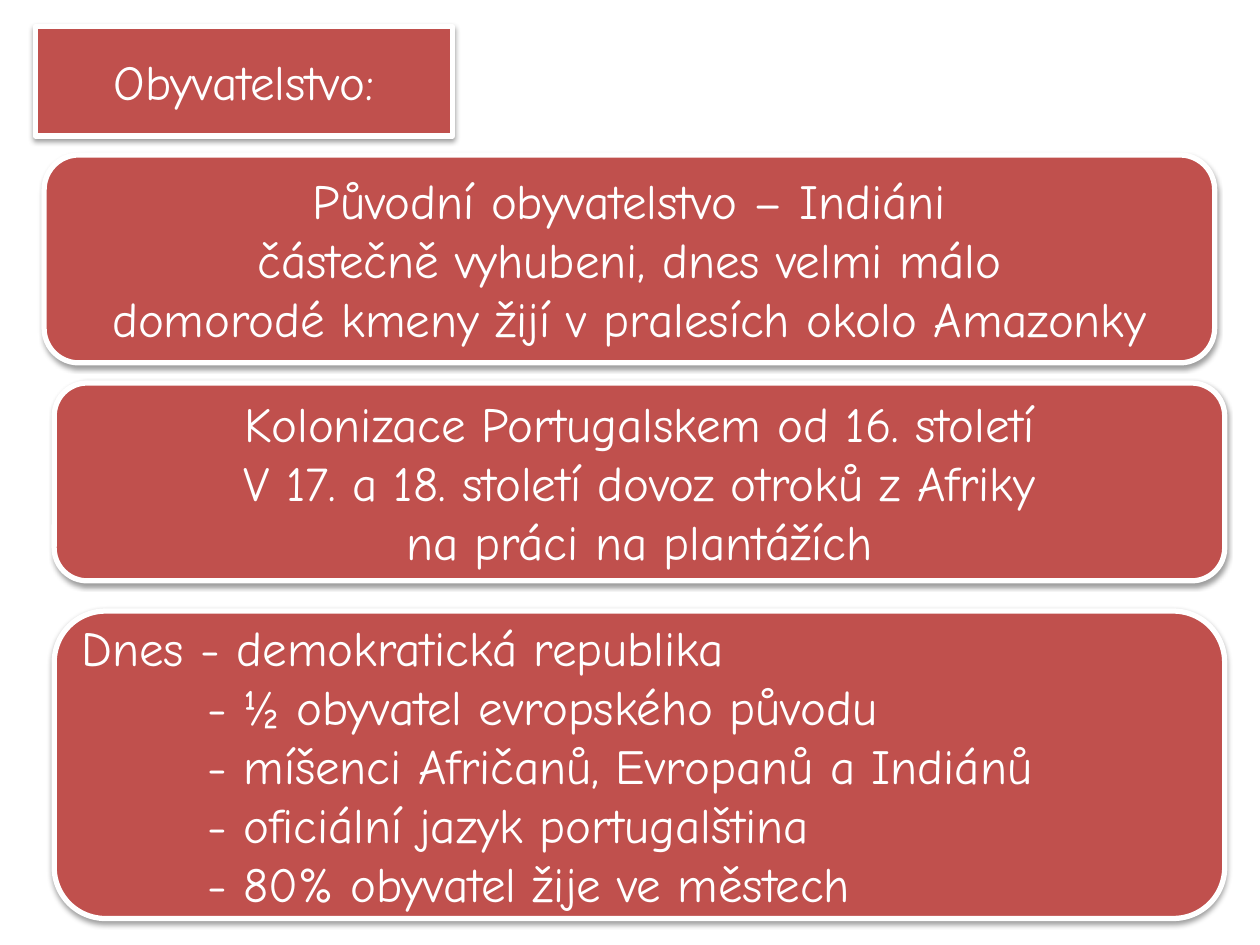
from dataclasses import dataclass

from pptx import Presentation
from pptx.dml.color import RGBColor
from pptx.enum.shapes import MSO_SHAPE as Shape
from pptx.enum.text import MSO_ANCHOR as Anchor, MSO_AUTO_SIZE as AutoSize, PP_ALIGN as Align
from pptx.oxml import parse_xml
from pptx.oxml.ns import nsdecls
from pptx.util import Inches, Pt


@dataclass(frozen=True)
class Theme:
    fill: RGBColor = RGBColor(0xC0, 0x50, 0x4D)
    light: RGBColor = RGBColor(0xFF, 0xFF, 0xFF)
    shadow: str = "000000"
    font: str = "Comic Neue"
    size: int = 28
    border: int = 3


class Deck:
    COLS, ROWS = 100, 75
    TITLE_ONLY = 5

    def __init__(self, theme):
        self.theme = theme
        self.prs = Presentation()
        self.prs.slide_width, self.prs.slide_height = Inches(10), Inches(7.5)
        self.s = self.prs.slides.add_slide(self.prs.slide_layouts[self.TITLE_ONLY])

    def place(self, col, row, cols, rows):
        dx = self.prs.slide_width / self.COLS
        dy = self.prs.slide_height / self.ROWS
        return [round(v) for v in (col * dx, row * dy, cols * dx, rows * dy)]

    def title(self, text, *cell):
        sp = self.s.shapes.title
        sp.left, sp.top, sp.width, sp.height = self.place(*cell)
        sp._element.spPr.append(parse_xml(
            f'<a:prstGeom {nsdecls("a")} prst="roundRect"><a:avLst/></a:prstGeom>'))
        self.panel(sp, [text], Align.CENTER)

    def card(self, lines, *cell, align=Align.CENTER, indent=0):
        sp = self.s.shapes.add_shape(Shape.ROUNDED_RECTANGLE, *self.place(*cell))
        self.panel(sp, lines, align)
        for p in sp.text_frame.paragraphs[1:]:
            p._p.get_or_add_pPr().set("marL", str(Inches(indent)))

    def panel(self, sp, lines, align):
        t = self.theme
        sp.fill.solid()
        sp.fill.fore_color.rgb = t.fill
        sp.line.color.rgb = t.light
        sp.line.width = Pt(t.border)
        sp._element.spPr.append(parse_xml(
            f'<a:effectLst {nsdecls("a")}><a:outerShdw blurRad="{Pt(3.1)}" dist="{Pt(1.6)}" '
            f'dir="5400000" rotWithShape="0"><a:srgbClr val="{t.shadow}">'
            '<a:alpha val="38000"/></a:srgbClr></a:outerShdw></a:effectLst>'))
        tf = sp.text_frame
        tf.text = "\n".join(lines)
        tf.word_wrap = True
        tf.auto_size = AutoSize.NONE
        tf.vertical_anchor = Anchor.MIDDLE
        for p in tf.paragraphs:
            p.alignment = align
            for r in p.runs:
                r.font.name = t.font
                r.font.size = Pt(t.size)
                r.font.color.rgb = t.light

    def save(self):
        self.prs.save("out.pptx")


def main():
    deck = Deck(Theme())
    deck.title("Obyvatelstvo:", 2.8, 2.1, 33.1, 8.7)
    deck.card(["Původní obyvatelstvo – Indiáni",
               "částečně vyhubeni, dnes velmi málo",
               "domorodé kmeny žijí v pralesích okolo Amazonky"],
              3.5, 12.3, 92.9, 16.5)
    deck.card(["Kolonizace Portugalskem od 16. století",
               "V 17. a 18. století dovoz otroků z Afriky",
               "na práci na plantážích"],
              4.3, 30.4, 92.9, 15.7)
    deck.card(["Dnes - demokratická republika",
               "- ½ obyvatel evropského původu",
               "- míšenci Afričanů, Evropanů a Indiánů",
               "- oficiální jazyk portugalština",
               "- 80% obyvatel žije ve městech"],
              4.3, 48.5, 92.9, 24.4, align=Align.LEFT, indent=1)
    deck.save()


if __name__ == "__main__":
    main()
